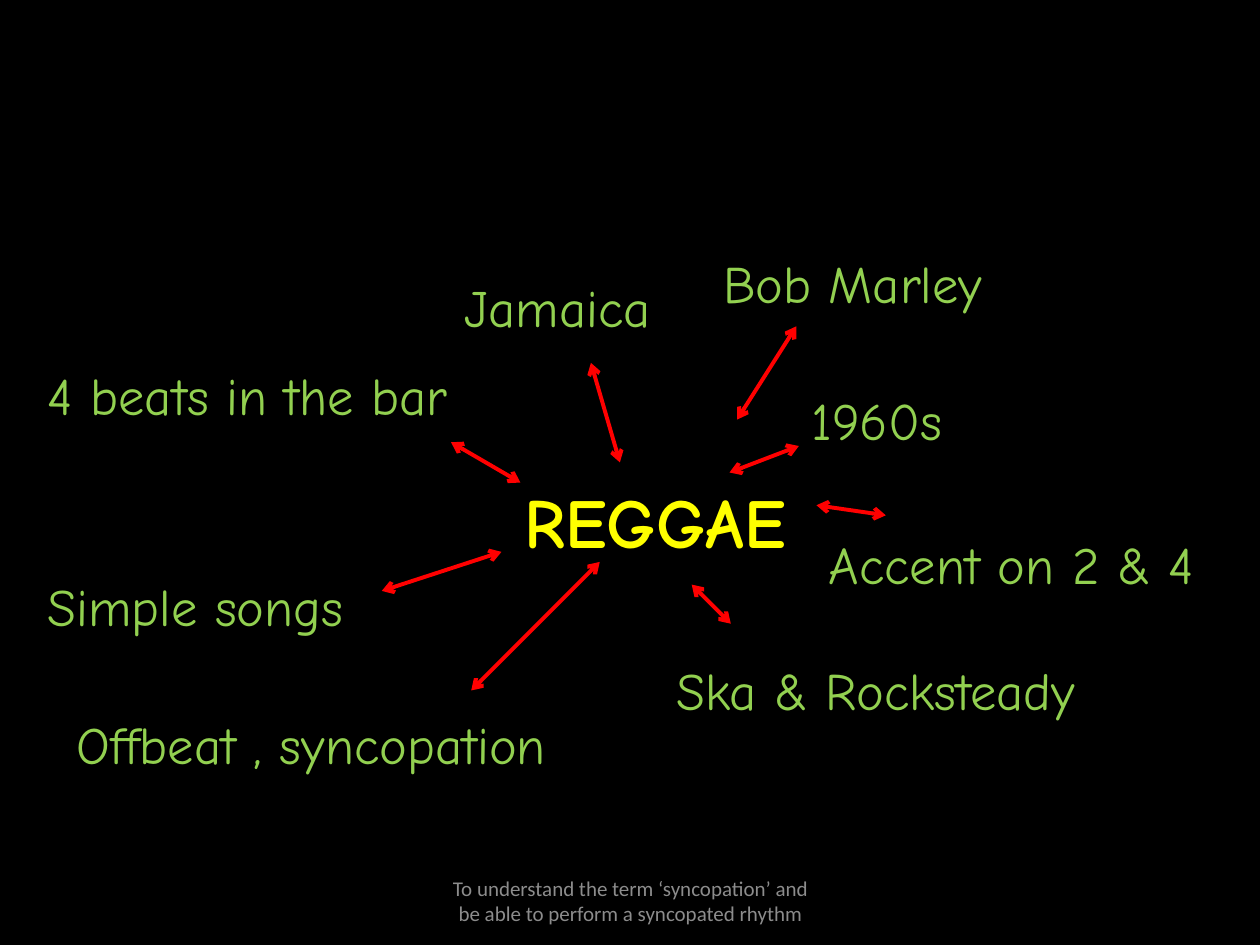
from dataclasses import dataclass

from lxml.etree import SubElement
from pptx import Presentation
from pptx.dml.color import RGBColor
from pptx.enum.shapes import MSO_CONNECTOR
from pptx.enum.text import MSO_ANCHOR, MSO_AUTO_SIZE, PP_ALIGN
from pptx.oxml.ns import qn
from pptx.util import Inches, Pt


@dataclass(frozen=True)
class Theme:
    background: RGBColor = RGBColor(0x00, 0x00, 0x00)
    topic: RGBColor = RGBColor(0xFF, 0xFF, 0x00)
    idea: RGBColor = RGBColor(0x92, 0xD0, 0x50)
    arrow: RGBColor = RGBColor(0xFF, 0x00, 0x00)
    footer: RGBColor = RGBColor(0x8C, 0x8C, 0x8C)
    map_font: str = "Comic Neue"
    footer_font: str = "Calibri"
    topic_size: Pt = Pt(40)
    idea_size: Pt = Pt(30)
    footer_size: Pt = Pt(12)
    arrow_width: Pt = Pt(2.25)


THEME = Theme()
TOPIC_FORMAT = {"name": THEME.map_font, "size": THEME.topic_size, "bold": True}
IDEA_FORMAT = {"name": THEME.map_font, "size": THEME.idea_size, "bold": False}
FOOTER_FORMAT = {"name": THEME.footer_font, "size": THEME.footer_size, "bold": False}

TOPIC = ("REGGAE", (2.28, 1.81))
BRANCHES = [
    ("Jamaica", (3.31, 0.19), (4.64, 1.73), (4.41, 0.94)),
    ("1960s", (6.06, 1.09), (5.51, 1.81), (6.06, 1.6)),
    ("Ska & Rocksteady", (4.99, 3.23), (5.52, 3.01), (5.21, 2.7)),
    ("Offbeat , syncopation", (0.23, 3.66), (3.46, 3.54), (4.48, 2.52)),
    ("4 beats in the bar", (0, 0.89), (3.85, 1.89), (3.3, 1.57)),
    ("Accent on 2 & 4", (6.2, 2.23), (6.2, 2.07), (6.75, 2.15)),
    ("Simple songs", (0, 2.57), (2.75, 2.75), (3.7, 2.44)),
    ("Bob Marley", (5.36, 0), (5.57, 1.39), (6.04, 0.65)),
]
OBJECTIVE = (
    "To understand the term ‘syncopation’ and be able to perform a syncopated rhythm"
)


def write_text(shape, text, font_format, color, alignment, anchor):
    frame = shape.text_frame
    frame_format = {
        "text": text,
        "word_wrap": True,
        "auto_size": MSO_AUTO_SIZE.NONE,
        "vertical_anchor": anchor,
    }
    for name, value in frame_format.items():
        setattr(frame, name, value)
    paragraph = frame.paragraphs[0]
    paragraph.alignment = alignment
    font = paragraph.runs[0].font
    for name, value in font_format.items():
        setattr(font, name, value)
    font.color.rgb = color


def add_arrow(slide, start, end):
    connector = slide.shapes.add_connector(MSO_CONNECTOR.STRAIGHT, *start, *end)
    connector.line.color.rgb = THEME.arrow
    connector.line.width = THEME.arrow_width
    line = connector.line._get_or_add_ln()
    for tag in ("a:headEnd", "a:tailEnd"):
        SubElement(line, qn(tag), type="arrow")
    SubElement(connector._element.spPr, qn("a:effectLst"))


def place_mind_map(slide, left, top):
    def locate(point):
        return left + Inches(point[0]), top + Inches(point[1])

    topic, topic_corner = TOPIC
    title = slide.shapes.title
    title.left, title.top = locate(topic_corner)
    title.width, title.height = Inches(5.28), Inches(0.77)
    write_text(
        title, topic, TOPIC_FORMAT, THEME.topic, PP_ALIGN.CENTER, MSO_ANCHOR.TOP
    )
    for idea, corner, start, end in BRANCHES:
        width = Inches(5.28 if idea.startswith("Offbeat") else 3.78)
        label = slide.shapes.add_textbox(*locate(corner), width, Inches(0.61))
        write_text(
            label, idea, IDEA_FORMAT, THEME.idea, PP_ALIGN.LEFT, MSO_ANCHOR.TOP
        )
        add_arrow(slide, locate(start), locate(end))


def place_footer(slide, left, top, width, height):
    footer = slide.shapes.add_textbox(left, top, width, height)
    write_text(
        footer,
        OBJECTIVE,
        FOOTER_FORMAT,
        THEME.footer,
        PP_ALIGN.CENTER,
        MSO_ANCHOR.MIDDLE,
    )


def main():
    presentation = Presentation()
    presentation.slide_width = Inches(10)
    presentation.slide_height = Inches(7.5)
    slide = presentation.slides.add_slide(
        presentation.slide_layouts.get_by_name("Title Only")
    )
    slide.background.fill.solid()
    slide.background.fill.fore_color.rgb = THEME.background
    place_mind_map(slide, Inches(0.28), Inches(1.94))
    place_footer(slide, Inches(3.42), Inches(6.95), Inches(3.17), Inches(0.4))
    presentation.save("out.pptx")


if __name__ == "__main__":
    main()
